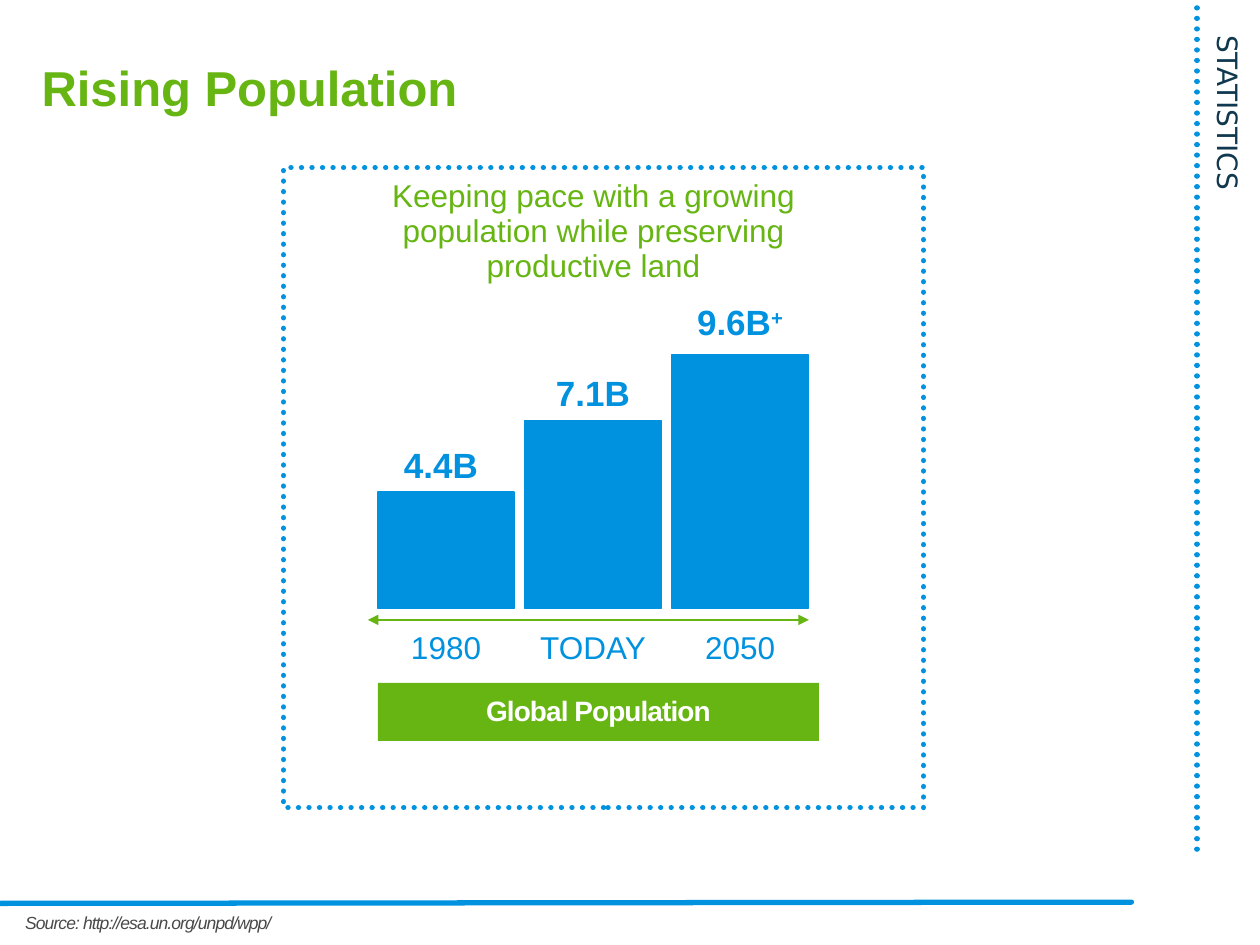
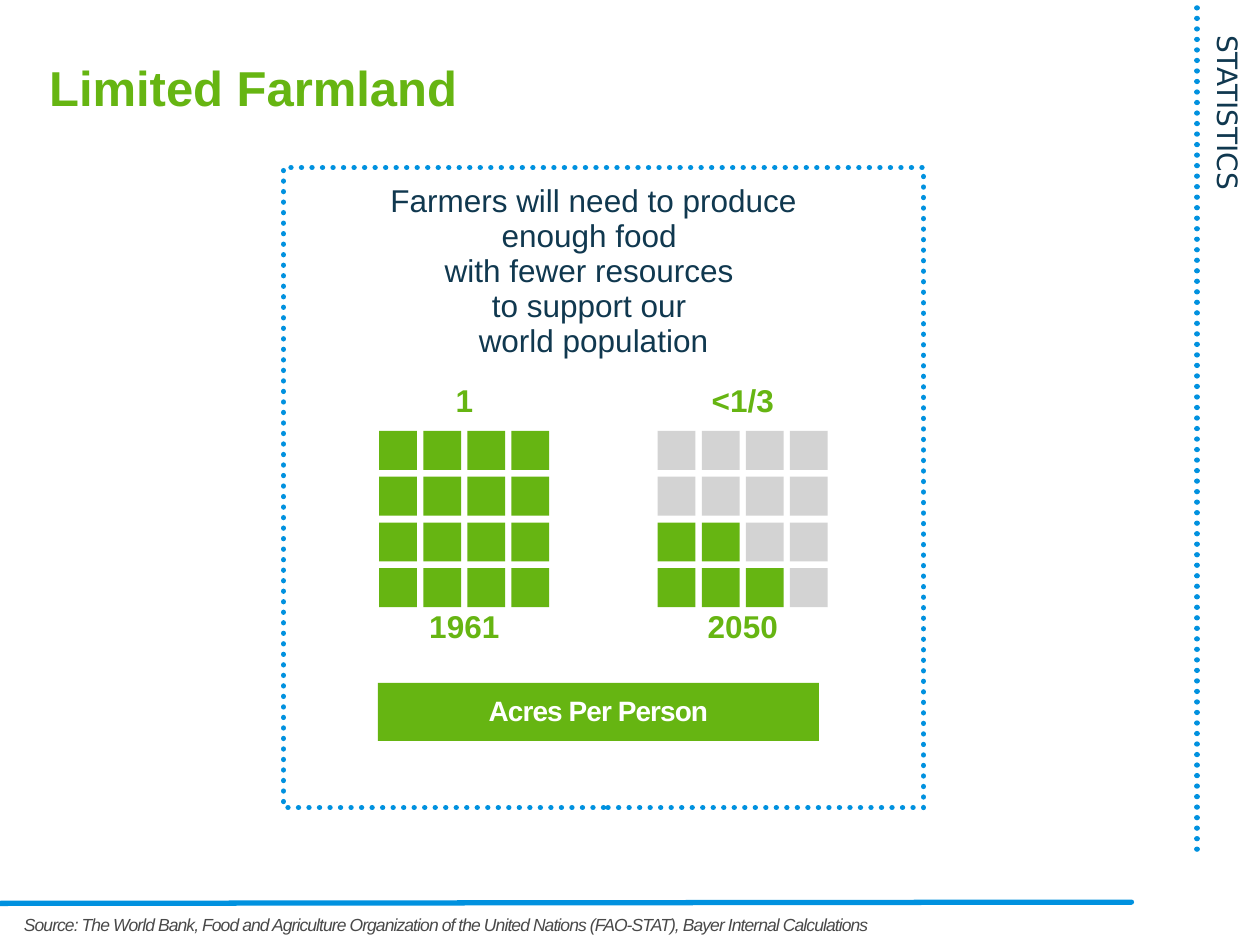
import pptx
import pptx.dml.color
import pptx.enum.dml
import pptx.enum.shapes
import pptx.enum.text
import pptx.oxml
import pptx.oxml.ns
import pptx.util

RGBColor = pptx.dml.color.RGBColor
Inches = pptx.util.Inches
Pt = pptx.util.Pt
ALIGN = pptx.enum.text.PP_ALIGN
ANCHOR = pptx.enum.text.MSO_ANCHOR
AUTO_SIZE = pptx.enum.text.MSO_AUTO_SIZE
RECTANGLE = pptx.enum.shapes.MSO_SHAPE.RECTANGLE
STRAIGHT = pptx.enum.shapes.MSO_CONNECTOR.STRAIGHT
DOTTED = pptx.enum.dml.MSO_LINE.ROUND_DOT

GREEN = RGBColor(0x66, 0xB5, 0x12)
BLUE = RGBColor(0x00, 0x91, 0xDF)
NAVY = RGBColor(0x10, 0x38, 0x4F)
GRAY = RGBColor(0x49, 0x49, 0x49)
LIGHT_GRAY = RGBColor(0xB6, 0xB6, 0xB6)
WHITE = RGBColor(0xFF, 0xFF, 0xFF)

# Content
SECTION = "STATISTICS"
POPULATION = {
    "title": "Rising Population", "title_left": 0.23,
    "message": ["Keeping pace with a growing population while preserving productive land"],
    "message_box": (2.75, 1.38, 3.92, 0.94), "message_color": GREEN,
    "banner": "Global Population",
    "source": "Source: http://esa.un.org/unpd/wpp/",
    "source_box": (0.2, 7.12, 6.01, 0.42),
}
BARS = [  # period, billions, suffix, label shift
    ("1980", 4.4, "", (-0.04, 0)),
    ("TODAY", 7.1, "", (0, 0)),
    ("2050", 9.6, "+", (0, -0.04)),
]
FARMLAND = {
    "title": "Limited Farmland", "title_left": 0.29,
    "message": ["Farmers will need to produce enough food ", "with fewer resources ",
                "to support our ", "world population"],
    "message_box": (2.75, 1.42, 3.92, 1.49), "message_color": NAVY,
    "banner": "Acres Per Person",
    "source": "Source: The World Bank, Food and Agriculture Organization of the United Nations "
              "(FAO-STAT), Bayer Internal Calculations",
    "source_box": (0.19, 7.09, 8.17, 0.51),
}
FIELDS = [  # year, acres, left edge, filled cells in each row from the top
    ("1961", "1", 3.01, (4, 4, 4, 4)),
    ("2050", "<1/3", 5.22, (0, 0, 2, 3)),
]

# Grid
FRAME = (2.25, 1.33, 5.08, 5.08)
BANNER = (3, 5.42, 3.5, 0.46)
BAR_LEFT, BAR_WIDTH, BAR_PITCH, BAR_BASE = 3, 1.08, 7 / 6, 4.83
INCHES_PER_BILLION = 0.21
FIELD_TOP, FIELD_WIDTH, FIELD_HEIGHT = 3.42, 1.35, 1.4
CELL_WIDTH, CELL_HEIGHT, CELLS_PER_SIDE = 0.3, 0.31, 4


def inches(values):
    return [Inches(value) for value in values]


def add_run(paragraph, text, size, color, bold=False, italic=False, font="Arial", **attributes):
    """Add one run; attributes such as spc and baseline go to its properties."""
    run = paragraph.add_run()
    run.text = text
    run.font.name, run.font.size = font, Pt(size)
    run.font.bold, run.font.italic = bold, italic
    run.font.color.rgb = color
    for name, value in attributes.items():
        run.font._element.set(name, str(value))


def format_frame(shape, anchor, margins, align=ALIGN.CENTER, spacing=0.92, after=12):
    frame = shape.text_frame
    frame.word_wrap = True
    frame.vertical_anchor = anchor
    (frame.margin_left, frame.margin_top,
     frame.margin_right, frame.margin_bottom) = inches(margins)
    paragraph = frame.paragraphs[0]
    paragraph.alignment = align
    paragraph.line_spacing = spacing
    paragraph.space_after = Pt(after)
    return paragraph


def add_text(slide, box, lines, size, color, bold=False, anchor=ANCHOR.TOP,
             margins=(0, 0, 0, 0), grow=False):
    """Add centred text with line breaks between lines; return its paragraph."""
    shape = slide.shapes.add_textbox(*inches(box))
    paragraph = format_frame(shape, anchor, margins)
    if grow:
        shape.text_frame.auto_size = AUTO_SIZE.SHAPE_TO_FIT_TEXT
    for index, line in enumerate(lines):
        if index:
            paragraph.add_line_break()
        add_run(paragraph, line, size, color, bold)
    return paragraph


def style_line(line, color, width, dotted=False):
    line.color.rgb = color
    line.width = Pt(width)
    if dotted:
        line.dash_style = DOTTED
    return line


def round_caps(shape):
    shape.line._get_or_add_ln().set("cap", "rnd")


def add_rectangle(shapes, box, fill=None, alpha=None):
    shape = shapes.add_shape(RECTANGLE, *inches(box))
    shape.shadow.inherit = False
    shape.line.fill.background()
    if fill is None:
        shape.fill.background()
        return shape
    shape.fill.solid()
    shape.fill.fore_color.rgb = fill
    if alpha:
        color = shape._element.spPr.find(".//" + pptx.oxml.ns.qn("a:srgbClr"))
        color.append(pptx.oxml.parse_xml(
            f'<a:alpha {pptx.oxml.ns.nsdecls("a")} val="{alpha * 1000}"/>'))
    return shape


def add_line(slide, start, end, color, width, dotted=False, arrows=False):
    connector = slide.shapes.add_connector(STRAIGHT, *inches(start + end))
    style_line(connector.line, color, width, dotted)
    round_caps(connector)
    namespace = pptx.oxml.ns.nsdecls("a")
    if arrows:
        for tag in ("headEnd", "tailEnd"):
            connector.line._get_or_add_ln().append(
                pptx.oxml.parse_xml(f'<a:{tag} {namespace} type="triangle"/>'))
    connector._element.spPr.append(pptx.oxml.parse_xml(f"<a:effectLst {namespace}/>"))


def add_base_slide(presentation, content):
    """Add a slide with everything that both slides share."""
    slide = presentation.slides.add_slide(presentation.slide_layouts[5])
    add_line(slide, (9.5, 6.74), (9.5, 0), BLUE, 3, dotted=True)
    add_line(slide, (8.98, 7.16), (0, 7.17), BLUE, 3)

    section = slide.shapes.add_textbox(*inches((7.58, 2.16, 4.33, 0.37)))
    section.rotation = 90
    paragraph = format_frame(section, ANCHOR.TOP, (0.1, 0.05, 0.1, 0.05), ALIGN.LEFT, 1, 0)
    add_run(paragraph, SECTION, 16, NAVY, font="DejaVu Sans")

    title = slide.shapes.title
    title.left, title.top, title.width, title.height = inches(
        (content["title_left"], 0.3, 8.75, 0.78))
    paragraph = format_frame(title, ANCHOR.MIDDLE, (0.1, 0.05, 0.1, 0.05), ALIGN.LEFT, 1, 0)
    title.text_frame.auto_size = AUTO_SIZE.NONE
    add_run(paragraph, content["title"], 28, GREEN, bold=True)

    frame = add_rectangle(slide.shapes, FRAME)
    style_line(frame.line, BLUE, 3, dotted=True)
    round_caps(frame)

    add_text(slide, content["message_box"], content["message"], 18, content["message_color"],
             margins=(0.1, 0.05, 0.1, 0.05), grow=True)

    banner = add_rectangle(slide.shapes, BANNER, GREEN)
    paragraph = format_frame(banner, ANCHOR.MIDDLE, (0, 0, 0, 0))
    add_run(paragraph, content["banner"], 16, WHITE, bold=True, spc=-50)

    source = slide.shapes.add_textbox(*inches(content["source_box"]))
    paragraph = format_frame(source, ANCHOR.MIDDLE, (0, 0, 0, 0), ALIGN.LEFT, 0.9, 0)
    add_run(paragraph, content["source"], 10, GRAY, italic=True, spc=-50)
    return slide


def add_population_bars(slide):
    for index, (period, billions, suffix, (shift_x, shift_y)) in enumerate(BARS):
        left = BAR_LEFT + index * BAR_PITCH
        height = billions * INCHES_PER_BILLION
        top = BAR_BASE - height
        bar = add_rectangle(slide.shapes, (left, top, BAR_WIDTH, height), BLUE)
        style_line(bar.line, BLUE, 0.75)
        label = add_text(slide, (left + shift_x, top - 0.37 + shift_y, BAR_WIDTH, 0.37),
                         [f"{billions}B"], 20, BLUE, True, ANCHOR.BOTTOM, (0, 0, 0, 0.05))
        if suffix:
            add_run(label, suffix, 20, BLUE, bold=True, baseline=30000)
        add_text(slide, (left, 5.01, BAR_WIDTH, 0.24), [period], 18, BLUE)
    add_line(slide, (2.92, 4.92), (6.42, 4.92), GREEN, 1.5, arrows=True)


def add_field(slide, year, acres, left, filled_by_row):
    """Draw one square field of cells with its acres above and year below."""
    pitch_x = (FIELD_WIDTH - CELL_WIDTH) / (CELLS_PER_SIDE - 1)
    pitch_y = (FIELD_HEIGHT - CELL_HEIGHT) / (CELLS_PER_SIDE - 1)
    group = slide.shapes.add_group_shape()
    for row, filled in enumerate(filled_by_row):
        for column in range(CELLS_PER_SIDE):
            box = (left + column * pitch_x, FIELD_TOP + row * pitch_y, CELL_WIDTH, CELL_HEIGHT)
            if column < filled:
                add_rectangle(group.shapes, box, GREEN)
            else:
                add_rectangle(group.shapes, box, LIGHT_GRAY, alpha=60)
    add_text(slide, (left, 3, FIELD_WIDTH, 0.38), [acres], 18, GREEN, True,
             ANCHOR.MIDDLE, (0.1, 0.05, 0.1, 0.05), grow=True)
    add_text(slide, (left, 4.85, FIELD_WIDTH, 0.25), [year], 18, GREEN, True)


def main():
    presentation = pptx.Presentation()
    presentation.slide_width, presentation.slide_height = Inches(10), Inches(7.5)
    add_population_bars(add_base_slide(presentation, POPULATION))
    farmland_slide = add_base_slide(presentation, FARMLAND)
    for field in FIELDS:
        add_field(farmland_slide, *field)
    presentation.save("out.pptx")


if __name__ == "__main__":
    main()
